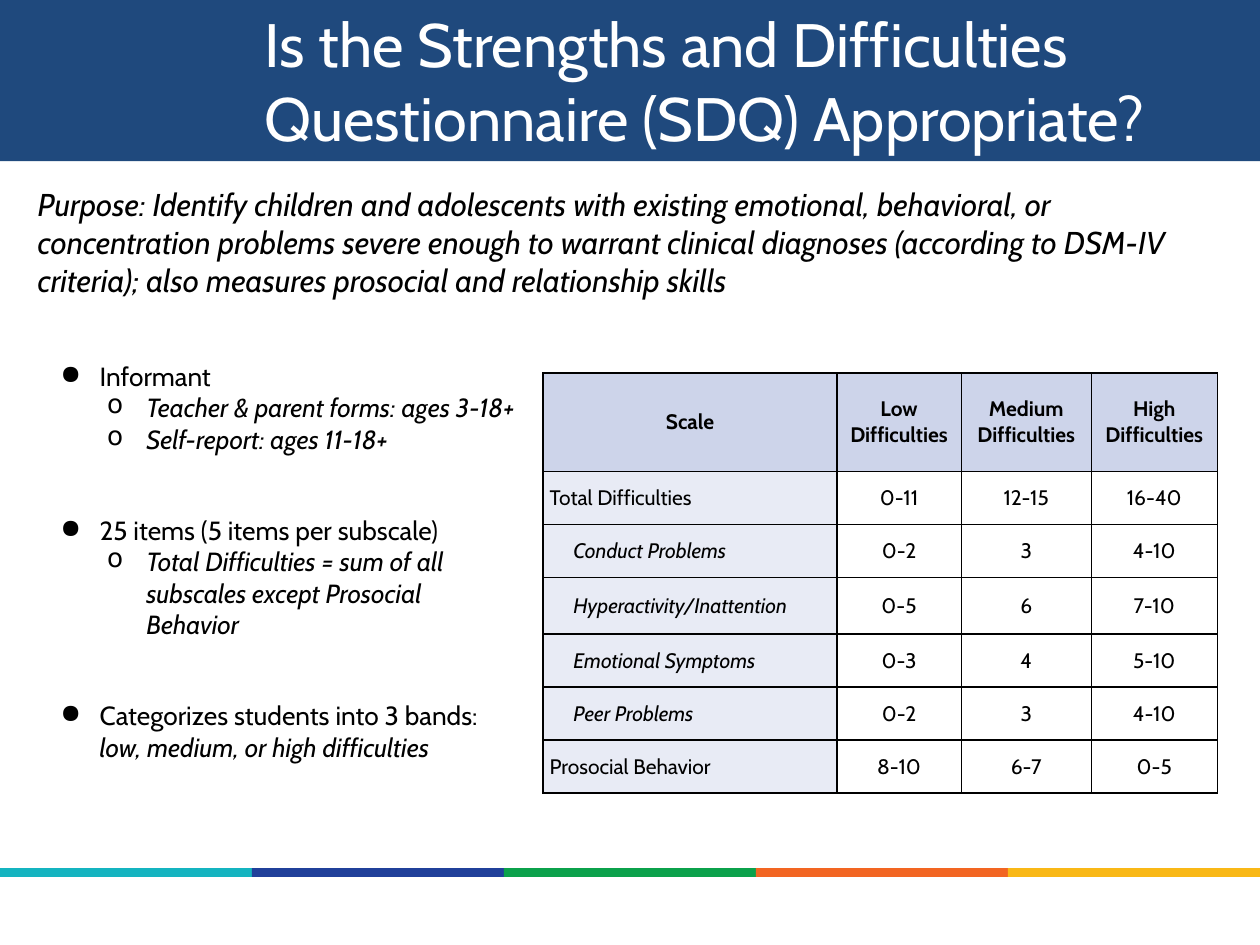
from dataclasses import dataclass

import pptx
import pptx.dml.color
import pptx.enum.shapes
import pptx.enum.text
import pptx.oxml
import pptx.oxml.ns
import pptx.util
from lxml import etree

Cm, Pt = pptx.util.Cm, pptx.util.Pt
RGBColor = pptx.dml.color.RGBColor
ALIGN, ANCHOR = pptx.enum.text.PP_ALIGN, pptx.enum.text.MSO_ANCHOR

FONT = "Cabin"
WHITE = RGBColor(0xFF, 0xFF, 0xFF)
BLACK = RGBColor(0x00, 0x00, 0x00)
NAVY = RGBColor(0x1F, 0x49, 0x7D)
HEADER_FILL = RGBColor(0xCD, 0xD4, 0xEA)
SCALE_FILL = RGBColor(0xE8, 0xEB, 0xF5)
STRIPE_COLORS = (
    RGBColor(0x14, 0xB4, 0xC0),
    RGBColor(0x20, 0x40, 0x9A),
    RGBColor(0x0B, 0xA1, 0x4B),
    RGBColor(0xF2, 0x65, 0x22),
    RGBColor(0xF9, 0xB8, 0x17),
)
SLIDE_WIDTH = 25.4


@dataclass(frozen=True)
class Box:
    """A place on the slide, in centimetres."""
    left: float
    top: float
    width: float
    height: float

    def lengths(self) -> tuple:
        return Cm(self.left), Cm(self.top), Cm(self.width), Cm(self.height)


@dataclass(frozen=True)
class Fact:
    text: str
    level: int = 0
    emphasis: str = ""
    gap: int = 0


@dataclass(frozen=True)
class Scale:
    name: str
    bands: tuple
    subscale: bool = False
    height: float = 1.07


FACTS = (
    Fact("Informant"),
    Fact("Teacher & parent forms: ages 3-18+", level=1),
    Fact("Self-report: ages 11-18+", level=1),
    Fact("25 items (5 items per subscale)", gap=34),
    Fact("Total Difficulties = sum of all subscales except Prosocial Behavior", level=1),
    Fact("Categorizes students into 3 bands:",
         emphasis=" low, medium, or high difficulties", gap=34),
)
BULLETS = ("●", "o")
INDENTS = (1.04, 1.98)

HEADINGS = ("Scale", "Low Difficulties", "Medium Difficulties", "High Difficulties")
COLUMN_WIDTHS = (5.92, 2.51, 2.62, 2.54)
HEADER_HEIGHT = 1.98
SCALES = (
    Scale("Total Difficulties", ("0-11", "12-15", "16-40")),
    Scale("Conduct Problems", ("0-2", "3", "4-10"), subscale=True),
    Scale("Hyperactivity/Inattention", ("0-5", "6", "7-10"), subscale=True, height=1.14),
    Scale("Emotional Symptoms", ("0-3", "4", "5-10"), subscale=True),
    Scale("Peer Problems", ("0-2", "3", "4-10"), subscale=True),
    Scale("Prosocial Behavior", ("8-10", "6-7", "0-5")),
)


def style(run, size: float, color=BLACK, bold=False, italic=False) -> None:
    font = run.font
    font.name, font.size, font.bold, font.italic = FONT, Pt(size), bold, italic
    font.color.rgb = color


def add_band(slide, box: Box, color: RGBColor) -> None:
    band = slide.shapes.add_shape(
        pptx.enum.shapes.MSO_SHAPE.RECTANGLE, *box.lengths())
    band.shadow.inherit = False
    band.fill.solid()
    band.fill.fore_color.rgb = color
    band.line.fill.background()


def add_frame(slide, box: Box, inset_x: float, inset_y: float, anchor=ANCHOR.TOP):
    frame = slide.shapes.add_textbox(*box.lengths()).text_frame
    frame.word_wrap = True
    frame.vertical_anchor = anchor
    frame.margin_left = frame.margin_right = Cm(inset_x)
    frame.margin_top = frame.margin_bottom = Cm(inset_y)
    return frame


def set_indent(paragraph, left: float, first: float = 0) -> None:
    properties = paragraph._p.get_or_add_pPr()
    properties.set("marL", str(Cm(left)))
    properties.set("indent", str(Cm(first)))


def add_bullet(paragraph, level: int) -> None:
    paragraph.level = level
    set_indent(paragraph, INDENTS[level], -0.79)
    properties = paragraph._p.get_or_add_pPr()
    qn = pptx.oxml.ns.qn
    color = etree.SubElement(properties, qn("a:buClr"))
    etree.SubElement(color, qn("a:srgbClr"), val=str(BLACK))
    etree.SubElement(properties, qn("a:buChar"), char=BULLETS[level])


def add_facts(slide, box: Box) -> None:
    frame = add_frame(slide, box, 0.18, 0.1)
    for index, fact in enumerate(FACTS):
        paragraph = frame.add_paragraph() if index else frame.paragraphs[0]
        paragraph.text = fact.text
        add_bullet(paragraph, fact.level)
        if index:
            paragraph.space_before = Pt(fact.gap)
        style(paragraph.runs[0], 15, italic=fact.level == 1)
        if fact.emphasis:
            emphasis = paragraph.add_run()
            emphasis.text = fact.emphasis
            style(emphasis, 15, italic=True)


def add_borders(cell) -> None:
    properties = cell._tc.get_or_add_tcPr()
    for side in ("lnL", "lnR", "lnT", "lnB"):
        properties.append(pptx.oxml.parse_xml(
            f'<a:{side} {pptx.oxml.ns.nsdecls("a")} w="{Pt(1)}"><a:solidFill>'
            f'<a:srgbClr val="{BLACK}"/></a:solidFill></a:{side}>'))


def fill_cell(cell, text: str, fill=None, bold=False, italic=False,
              align=ALIGN.CENTER) -> None:
    add_borders(cell)
    if fill is None:
        cell.fill.background()
    else:
        cell.fill.solid()
        cell.fill.fore_color.rgb = fill
    cell.vertical_anchor = ANCHOR.MIDDLE
    cell.margin_left = cell.margin_right = Cm(0.13)
    cell.margin_top = cell.margin_bottom = Cm(0.13)
    cell.text_frame.text = text
    paragraph = cell.text_frame.paragraphs[0]
    paragraph.alignment = align
    style(paragraph.runs[0], 12, bold=bold, italic=italic)


def add_scale_table(slide, left: float, top: float) -> None:
    heights = (HEADER_HEIGHT, *(scale.height for scale in SCALES))
    box = Box(left, top, sum(COLUMN_WIDTHS), sum(heights))
    table = slide.shapes.add_table(
        len(heights), len(COLUMN_WIDTHS), *box.lengths()).table
    for column, width in zip(table.columns, COLUMN_WIDTHS):
        column.width = Cm(width)
    for row, height in zip(table.rows, heights):
        row.height = Cm(height)
    for column, heading in enumerate(HEADINGS):
        fill_cell(table.cell(0, column), heading, HEADER_FILL, bold=True)
    for row, scale in enumerate(SCALES, start=1):
        name_cell = table.cell(row, 0)
        fill_cell(name_cell, scale.name, SCALE_FILL,
                  italic=scale.subscale, align=ALIGN.LEFT)
        if scale.subscale:
            set_indent(name_cell.text_frame.paragraphs[0], 0.48)
        for column, band in enumerate(scale.bands, start=1):
            fill_cell(table.cell(row, column), band)


def main() -> None:
    deck = pptx.Presentation()
    deck.slide_width, deck.slide_height = Cm(SLIDE_WIDTH), Cm(19.05)
    slide = deck.slides.add_slide(deck.slide_layouts[6])

    add_band(slide, Box(0, 0, SLIDE_WIDTH, 3.25), NAVY)
    stripe_width = SLIDE_WIDTH / len(STRIPE_COLORS)
    for index, color in enumerate(STRIPE_COLORS):
        add_band(slide, Box(index * stripe_width, 17.5, stripe_width, 0.18), color)

    title = add_frame(slide, Box(5.08, -0.03, 20.32, 3.28), 0.25, 0.13, ANCHOR.MIDDLE)
    title.text = "Is the Strengths and Difficulties Questionnaire (SDQ) Appropriate?"
    style(title.paragraphs[0].runs[0], 35, WHITE)

    purpose = add_frame(slide, Box(0.58, 3.56, 23.95, 2.97), 0.18, 0.18)
    purpose.text = (
        "Purpose: Identify children and adolescents with existing emotional, "
        "behavioral, or concentration problems severe enough to warrant clinical "
        "diagnoses (according to DSM-IV criteria); also measures prosocial and "
        "relationship skills")
    style(purpose.paragraphs[0].runs[0], 18, italic=True)

    add_facts(slide, Box(0.79, 7.16, 9.78, 9.93))
    add_scale_table(slide, 10.95, 7.52)
    deck.save("out.pptx")


if __name__ == "__main__":
    main()
